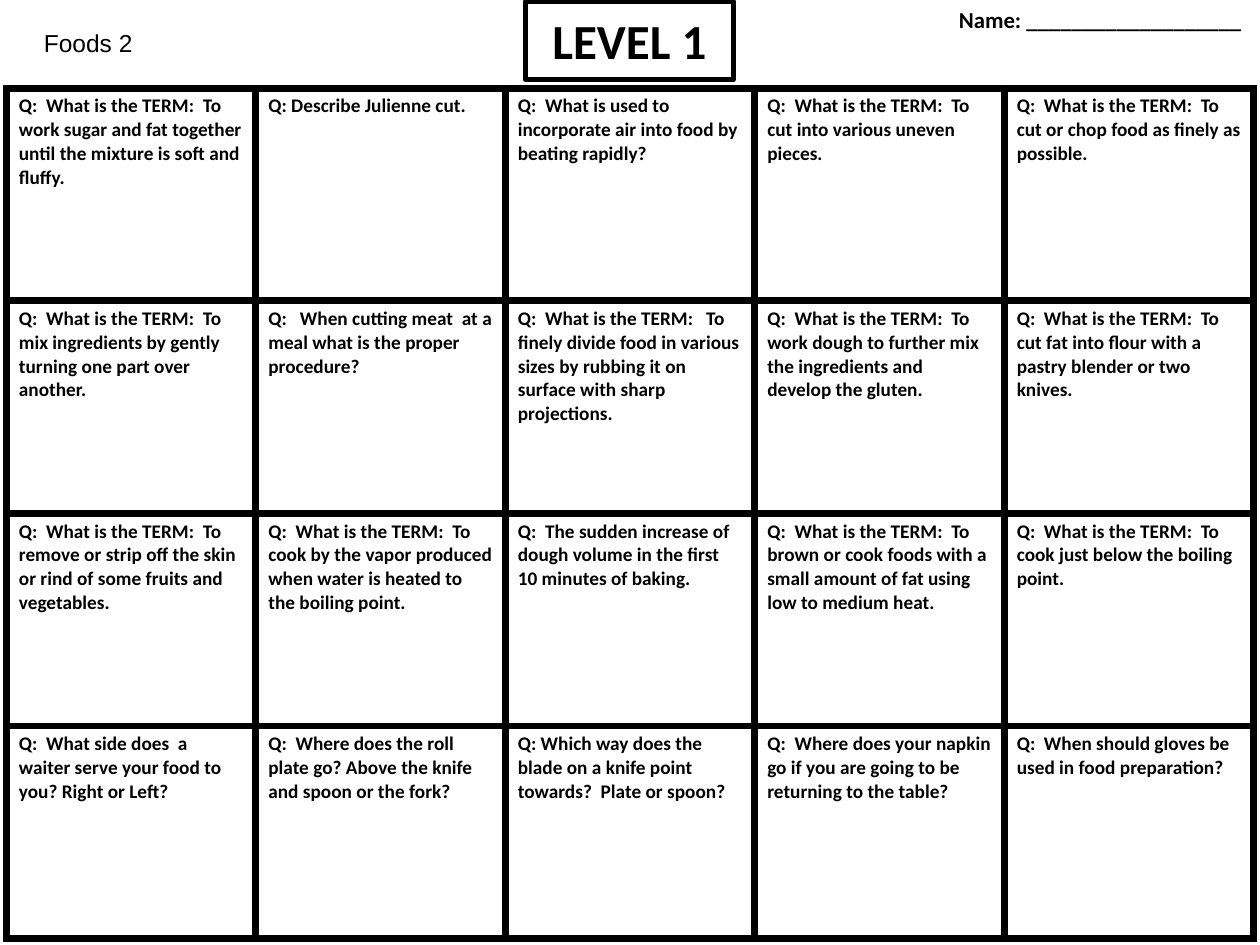
from dataclasses import dataclass
from itertools import product

from lxml.etree import SubElement
from pptx import Presentation
from pptx.dml.color import RGBColor
from pptx.enum.shapes import MSO_SHAPE
from pptx.enum.text import MSO_ANCHOR, PP_ALIGN
from pptx.oxml.ns import qn
from pptx.util import Inches, Pt

BLACK = RGBColor(0, 0, 0)
WHITE = RGBColor(255, 255, 255)
WIDE, HIGH = Inches(10), Inches(7.5)
EDGE = Pt(4.5)
TERM = "Q:  What is the TERM:  To "


@dataclass(frozen=True)
class Box:
    left: float
    top: float
    width: float
    height: float

    def place(self) -> tuple[int, int, int, int]:
        return (int(self.left * WIDE), int(self.top * HIGH),
                int(self.width * WIDE), int(self.height * HIGH))


@dataclass(frozen=True)
class Style:
    size: float
    font: str = "Calibri"
    bold: bool = True
    align: PP_ALIGN = PP_ALIGN.LEFT
    before: float = 0


@dataclass(frozen=True)
class Ask:
    text: str
    slant: str = ""


@dataclass(frozen=True)
class Label:
    text: str
    box: Box
    style: Style


ASK = Style(11)
TITLE = Label("LEVEL 1", Box(0.417, 0.0013, 0.165, 0.0827),
              Style(28, align=PP_ALIGN.CENTER))
LABELS = (
    Label("Foods 2", Box(0.025, 0.0227, 0.167, 0.0453),
          Style(14, "Arial", False)),
    Label("Name: ___________________", Box(0.746, 0, 0.254, 0.048),
          Style(13, align=PP_ALIGN.CENTER, before=2.6)),
)
GRID = Box(0.005, 0.0933, 0.99, 0.9)
ROWS = (
    (
        Ask(TERM + "work sugar and fat together until the mixture is soft and fluffy."),
        Ask("Q: Describe Julienne cut."),
        Ask("Q:  What is used to incorporate air into food by beating rapidly?"),
        Ask(TERM + "cut into various uneven pieces", "."),
        Ask(TERM + "cut or chop food as finely as possible."),
    ),
    (
        Ask(TERM + "mix ingredients by gently turning one part over another."),
        Ask("Q:   When cutting meat  at a meal what is the proper procedure?"),
        Ask("Q:  What is the TERM:   To finely divide food in various sizes "
            "by rubbing it on surface with sharp projections."),
        Ask(TERM + "work dough to further mix the ingredients and develop the gluten."),
        Ask(TERM + "cut fat into flour with a pastry blender or two knives."),
    ),
    (
        Ask(TERM + "remove or strip off the skin or rind of some fruits and vegetables."),
        Ask(TERM + "cook by the vapor produced when water is heated to the boiling point."),
        Ask("Q:  The sudden increase of  dough volume in the first 10 minutes of baking."),
        Ask(TERM + "brown or cook foods with a small amount of fat using low to medium heat."),
        Ask(TERM + "cook just below the boiling point."),
    ),
    (
        Ask("Q:  What side does  a waiter serve your food to you? Right or Left?"),
        Ask("Q:  Where does the roll plate go? Above the knife and spoon or the fork?"),
        Ask("Q: Which way does the blade on a knife point towards?  Plate or spoon?"),
        Ask("Q:  Where does your napkin go if you are going to be returning to the table?"),
        Ask("Q:  When should gloves be used in food preparation?"),
    ),
)


def add_run(para, text: str, style: Style, slant: bool = False) -> None:
    run = para.add_run()
    run.text = text
    font = run.font
    font.name, font.size = style.font, Pt(style.size)
    font.bold, font.italic = style.bold, slant
    font.color.rgb = BLACK


def fill_text(frame, text: str, style: Style) -> None:
    frame.word_wrap = True
    para = frame.paragraphs[0]
    para.alignment = style.align
    para.space_before = Pt(style.before)
    add_run(para, text, style)


def draw_label(slide, label: Label) -> None:
    box = slide.shapes.add_textbox(*label.box.place())
    fill_text(box.text_frame, label.text, label.style)


def draw_title(slide, label: Label) -> None:
    shape = slide.shapes.add_shape(MSO_SHAPE.RECTANGLE, *label.box.place())
    shape.shadow.inherit = False
    shape.fill.background()
    shape.line.color.rgb = BLACK
    shape.line.width = Pt(3)
    shape.text_frame.vertical_anchor = MSO_ANCHOR.MIDDLE
    fill_text(shape.text_frame, label.text, label.style)


def add_edges(cell) -> None:
    props = cell._tc.get_or_add_tcPr()
    for spot, side in enumerate(("lnL", "lnR", "lnT", "lnB")):
        line = SubElement(props, qn(f"a:{side}"), w=str(int(EDGE)))
        fill = SubElement(line, qn("a:solidFill"))
        SubElement(fill, qn("a:srgbClr"), val=str(BLACK))
        props.insert(spot, line)


def draw_grid(slide, rows: tuple[tuple[Ask, ...], ...], box: Box) -> None:
    high, wide = len(rows), len(rows[0])
    left, top, width, height = box.place()
    table = slide.shapes.add_table(high, wide, left, top, width, height).table
    table.first_row = table.horz_banding = False
    for col in table.columns:
        col.width = width // wide
    for row in table.rows:
        row.height = height // high
    for y, x in product(range(high), range(wide)):
        cell, ask = table.cell(y, x), rows[y][x]
        cell.fill.solid()
        cell.fill.fore_color.rgb = WHITE
        add_edges(cell)
        fill_text(cell.text_frame, ask.text, ASK)
        if ask.slant:
            add_run(cell.text_frame.paragraphs[0], ask.slant, ASK, True)


def main() -> None:
    deck = Presentation()
    deck.slide_width, deck.slide_height = WIDE, HIGH
    slide = deck.slides.add_slide(deck.slide_layouts[6])
    for label in LABELS:
        draw_label(slide, label)
    draw_title(slide, TITLE)
    draw_grid(slide, ROWS, GRID)
    deck.save("out.pptx")


if __name__ == "__main__":
    main()
